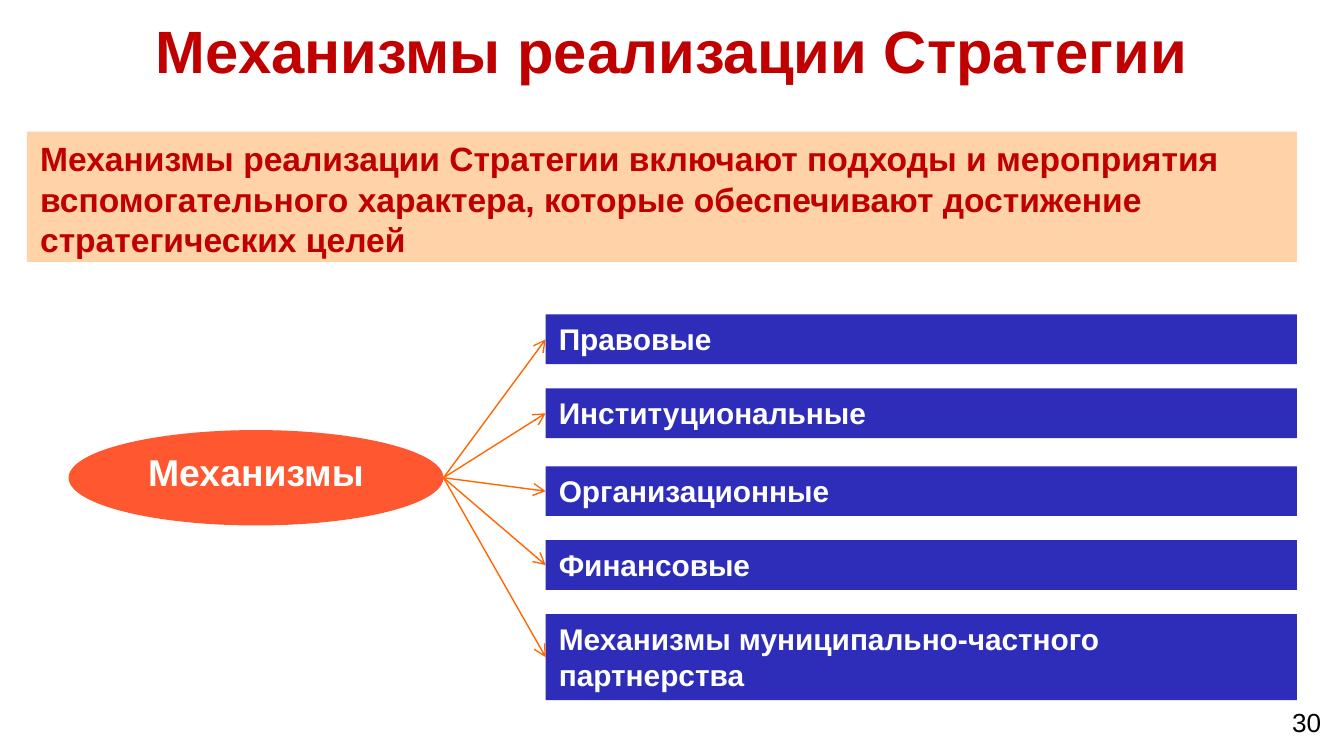
from lxml import etree
from pptx import Presentation
from pptx.dml.color import RGBColor
from pptx.enum.shapes import MSO_CONNECTOR, MSO_SHAPE
from pptx.enum.text import MSO_ANCHOR, PP_ALIGN
from pptx.oxml.ns import qn
from pptx.util import Inches, Pt

RECTANGLE = MSO_SHAPE.RECTANGLE
OVAL = MSO_SHAPE.OVAL
STRAIGHT = MSO_CONNECTOR.STRAIGHT
LEFT, CENTER, RIGHT = PP_ALIGN.LEFT, PP_ALIGN.CENTER, PP_ALIGN.RIGHT
TOP, BOTTOM = MSO_ANCHOR.TOP, MSO_ANCHOR.BOTTOM

FONT = "Arial"
RED, PEACH, BLUE = "C00000", "FFD3A7", "2D2DB9"
CORAL, ORANGE, WHITE, BLACK = "FF572F", "FF6600", "FFFFFF", "000000"

PAGE_WIDTH = 10
PAGE_HEIGHT = PAGE_WIDTH * 9 / 16
BAR_LEFT, BAR_WIDTH = 4.06, 5.59
HUB_LEFT, HUB_TOP, HUB_WIDTH, HUB_HEIGHT = 0.51, 3.2, 2.79, 0.71
MECHANISMS = [
    ("Правовые", 2.34, 0.37),
    ("Институциональные", 2.89, 0.37),
    ("Организационные", 3.47, 0.37),
    ("Финансовые", 4.02, 0.37),
    ("Механизмы муниципально-частного партнерства", 4.57, 0.64),
]


def color(value):
    return RGBColor.from_string(value)


def write_text(box, text, size, ink, bold=True, align=LEFT, anchor=TOP,
               insets=(0.1, 0.05), before=0, after=0, spacing=None):
    frame = box.text_frame
    frame.word_wrap = True
    frame.vertical_anchor = anchor
    frame.margin_left = frame.margin_right = Inches(insets[0])
    frame.margin_top = frame.margin_bottom = Inches(insets[1])
    para = frame.paragraphs[0]
    para.alignment = align
    para.space_before, para.space_after = Pt(before), Pt(after)
    para.line_spacing = spacing
    span = para.add_run()
    span.text = text
    span.font.name = FONT
    span.font.size = Pt(size)
    span.font.bold = bold
    span.font.color.rgb = color(ink)


def add_label(page, place, text, size, ink, **text_format):
    box = page.shapes.add_textbox(*map(Inches, place))
    write_text(box, text, size, ink, **text_format)


def add_panel(page, kind, place, fill, text, size, ink, **text_format):
    box = page.shapes.add_shape(kind, *map(Inches, place))
    box.shadow.inherit = False
    box.fill.solid()
    box.fill.fore_color.rgb = color(fill)
    box.line.fill.background()
    write_text(box, text, size, ink, **text_format)


def add_arrow(page, start, end):
    arrow = page.shapes.add_connector(STRAIGHT, *map(Inches, start + end))
    arrow.line.color.rgb = color(ORANGE)
    arrow.line.width = Pt(0.75)
    properties = arrow._element.spPr
    etree.SubElement(properties.find(qn("a:ln")), qn("a:tailEnd"), type="arrow")
    etree.SubElement(properties, qn("a:effectLst"))


def main():
    deck = Presentation()
    deck.slide_width, deck.slide_height = Inches(PAGE_WIDTH), Inches(PAGE_HEIGHT)
    page = deck.slides.add_slide(deck.slide_layouts[6])

    add_label(page, (0, 0.21, PAGE_WIDTH, 0.48), "Механизмы реализации Стратегии",
              32, RED, align=CENTER, anchor=BOTTOM, insets=(0.08, 0.04),
              spacing=0.93)
    add_panel(page, RECTANGLE, (0.2, 0.98, 9.45, 0.97), PEACH,
              "Механизмы реализации Стратегии включают подходы и мероприятия "
              "вспомогательного характера, которые обеспечивают достижение "
              "стратегических целей", 18, RED, before=6)
    add_panel(page, OVAL, (HUB_LEFT, HUB_TOP, HUB_WIDTH, HUB_HEIGHT), CORAL,
              "Механизмы", 20, WHITE, align=CENTER, insets=(0.07, 0.04))
    add_label(page, (8.15, 5.24, 1.75, 0.39), "30", 14, BLACK, bold=False,
              align=RIGHT, insets=(0.07, 0.04), spacing=0.93)

    hub_edge = (HUB_LEFT + HUB_WIDTH, HUB_TOP + HUB_HEIGHT / 2)
    for name, top, height in MECHANISMS:
        add_panel(page, RECTANGLE, (BAR_LEFT, top, BAR_WIDTH, height), BLUE,
                  name, 16, WHITE, after=6)
        add_arrow(page, hub_edge, (BAR_LEFT, top + height / 2))

    deck.save("out.pptx")


if __name__ == "__main__":
    main()
